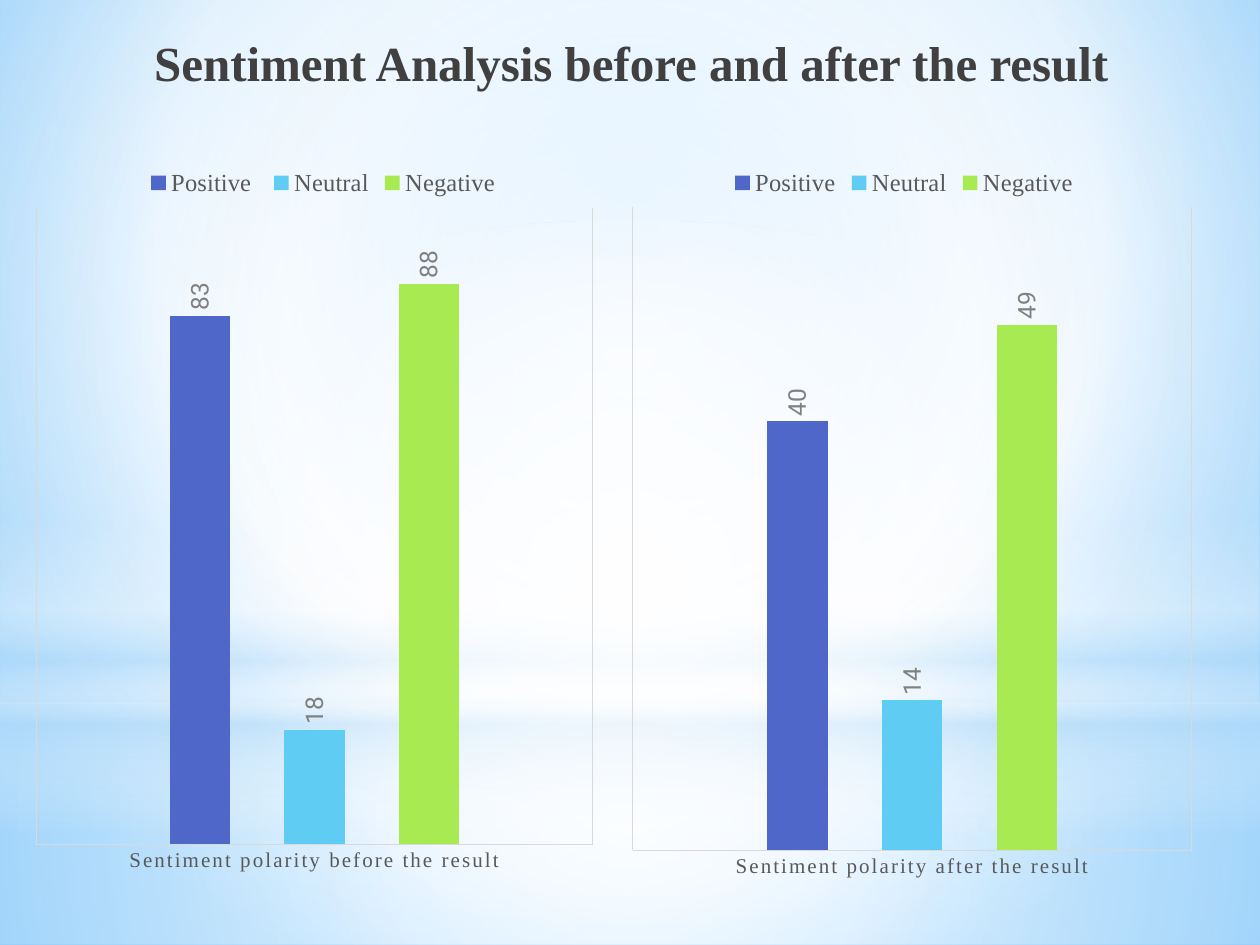
"""Build a slide with two column charts of sentiment before and after the result."""
from lxml import etree
from pptx import Presentation
from pptx.chart.data import CategoryChartData
from pptx.dml.color import RGBColor
from pptx.enum.chart import XL_CHART_TYPE, XL_LABEL_POSITION, XL_LEGEND_POSITION, XL_TICK_MARK
from pptx.enum.shapes import MSO_SHAPE
from pptx.enum.text import MSO_ANCHOR, PP_ALIGN
from pptx.oxml.ns import qn
from pptx.util import Inches, Pt

COLUMNS = XL_CHART_TYPE.COLUMN_CLUSTERED
OUTSIDE = XL_LABEL_POSITION.OUTSIDE_END
TOP_LEGEND = XL_LEGEND_POSITION.TOP
NO_TICK = XL_TICK_MARK.NONE
RECT, OVAL = MSO_SHAPE.RECTANGLE, MSO_SHAPE.OVAL
TOP, CENTER = MSO_ANCHOR.TOP, PP_ALIGN.CENTER

THEME = {
    "serif": "Times New Roman", "sans": "Roboto",
    "title": 28, "legend": 14, "value": 14, "category": 12, "chart": 10,
    "black": "000000", "text": "595959", "label": "808080", "line": "D9D9D9",
    "series": ["4E67C8", "5ECCF3", "A7EA52"],
    "white": "FFFFFF", "haze": "B4DCFA", "sky": "9ED5FF", "deep": "5BB9FF",
    "ink": "404040", "navy": "212745",
}
WHITE, HAZE = THEME["white"], THEME["haze"]
MIDDLE = (50, 50, 50, 50)


def set_gradient(parent, stops, focus=None):
    """Replace the solid fill of parent by a circular or a vertical gradient."""
    grad = etree.Element(qn("a:gradFill"), rotWithShape="1")
    stop_list = etree.SubElement(grad, qn("a:gsLst"))
    for pos, color, alpha in stops:
        stop = etree.SubElement(stop_list, qn("a:gs"), pos=str(pos * 1000))
        clr = etree.SubElement(stop, qn("a:srgbClr"), val=color)
        if alpha < 100:
            etree.SubElement(clr, qn("a:alpha"), val=str(alpha * 1000))
    if focus:
        circle = etree.SubElement(grad, qn("a:path"), path="circle")
        sides = {side: str(v * 1000) for side, v in zip("ltrb", focus)}
        etree.SubElement(circle, qn("a:fillToRect"), sides)
    else:
        etree.SubElement(grad, qn("a:lin"), ang="5400000", scaled="0")
    parent.replace(parent.find(qn("a:solidFill")), grad)


def set_font(font, face, size, color):
    """Give a chart font its face, size and colour."""
    font.name, font.size = face, Pt(size)
    font.color.rgb = RGBColor.from_string(color)


prs = Presentation()
prs.slide_width, prs.slide_height = Inches(10), Inches(7.5)
s = prs.slides.add_slide(prs.slide_layouts[5])

s.background.fill.solid()
set_gradient(s.element.find(".//" + qn("p:bgPr")),
             [(0, THEME["sky"], 100), (60, WHITE, 100), (100, THEME["deep"], 100)],
             (20, 10, 20, 60))

layers = [
    (RECT, 5.58, 1.92, [(0, WHITE, 91), (37, WHITE, 76), (100, HAZE, 79)], MIDDLE),
    (RECT, 0, 5.58, [(0, WHITE, 89), (48, WHITE, 62), (100, HAZE, 79)], MIDDLE),
    (RECT, 4.12, 2.5, [(0, WHITE, 0), (29, WHITE, 30), (45, HAZE, 40),
                       (55, WHITE, 26), (65, HAZE, 60), (100, WHITE, 0)], None),
    (OVAL, 1.75, 5.58, [(0, WHITE, 100), (56, WHITE, 0)], MIDDLE),
]
for kind, top, height, stops, focus in layers:
    sp = s.shapes.add_shape(kind, 0, Inches(top), prs.slide_width, Inches(height))
    sp.shadow.inherit = False
    sp.line.fill.background()
    sp.fill.solid()
    set_gradient(sp.element.spPr, stops, focus)

title = s.shapes.title
s.shapes.element.append(title.element)
title.left, title.top, title.width, title.height = map(Inches, (0.51, 0.21, 9, 1.25))
tf = title.text_frame
tf.word_wrap = True
tf.vertical_anchor = TOP
p = tf.paragraphs[0]
p.alignment = CENTER
r = p.add_run()
r.text = "Sentiment Analysis before and after the result"
r.font.name, r.font.size, r.font.bold = THEME["serif"], Pt(THEME["title"]), True
r.font.fill.solid()
set_gradient(r.font.fill._xPr, [(0, THEME["black"], 100), (40, THEME["ink"], 100),
                                (100, THEME["navy"], 65)])

charts = [
    ((0.28, 1.23, 4.57, 5.98), "Sentiment polarity before the result", 100,
     [("Positive ", 83), ("Neutral", 18), ("Negative", 88)], (0.002, 0.07, 0.966, 0.845)),
    ((4.84, 1.23, 4.67, 5.89), "Sentiment polarity after the result", 60,
     [("Positive", 40), ("Neutral", 14), ("Negative", 49)], (0.039, 0.07, 0.95, 0.867)),
]
for box, category, maximum, values, area in charts:
    data = CategoryChartData()
    data.categories = [category]
    for name, value in values:
        data.add_series(name, [value])
    chart = s.shapes.add_chart(COLUMNS, *map(Inches, box), data).chart
    chart.has_title = False
    set_font(chart.font, THEME["sans"], THEME["chart"], THEME["black"])
    chart.has_legend = True
    chart.legend.position = TOP_LEGEND
    chart.legend.include_in_layout = False
    set_font(chart.legend.font, THEME["serif"], THEME["legend"], THEME["text"])

    cat_axis = chart.category_axis
    cat_axis.major_tick_mark = NO_TICK
    cat_axis.has_major_gridlines = True
    set_font(cat_axis.tick_labels.font, THEME["serif"], THEME["category"], THEME["text"])
    for line in (cat_axis.format.line, cat_axis.major_gridlines.format.line):
        line.color.rgb = RGBColor.from_string(THEME["line"])
        line.width = Pt(0.75)
    val_axis = chart.value_axis
    val_axis.visible = False
    val_axis.has_major_gridlines = False
    val_axis.minimum_scale, val_axis.maximum_scale = 0, maximum

    plot = chart.plots[0]
    plot.vary_by_categories = False
    plot.gap_width, plot.overlap = 444, -90
    for ser, color in zip(plot.series, THEME["series"]):
        ser.format.fill.solid()
        ser.format.fill.fore_color.rgb = RGBColor.from_string(color)
        labels = ser.data_labels
        labels.show_value = True
        labels.position = OUTSIDE
        set_font(labels.font, THEME["sans"], THEME["value"], THEME["label"])

    root = chart.element
    for body in root.xpath(".//c:dLbls/c:txPr/a:bodyPr"):
        body.set("rot", "-5400000")
        body.set("vert", "horz")
    root.xpath(".//c:catAx/c:txPr//a:defRPr")[0].set("spc", "120")
    frame = etree.Element(qn("c:spPr"))
    etree.SubElement(frame, qn("a:noFill"))
    etree.SubElement(etree.SubElement(frame, qn("a:ln")), qn("a:noFill"))
    root.find(qn("c:chart")).addnext(frame)

    plot_area = root.xpath("c:chart/c:plotArea")[0]
    for old in plot_area.findall(qn("c:layout")):
        plot_area.remove(old)
    layout = etree.Element(qn("c:layout"))
    manual = etree.SubElement(layout, qn("c:manualLayout"))
    settings = [("layoutTarget", "inner"), ("xMode", "edge"), ("yMode", "edge"),
                *zip("xywh", area)]
    for tag, value in settings:
        etree.SubElement(manual, qn("c:" + tag), val=str(value))
    plot_area.insert(0, layout)

prs.save("out.pptx")
